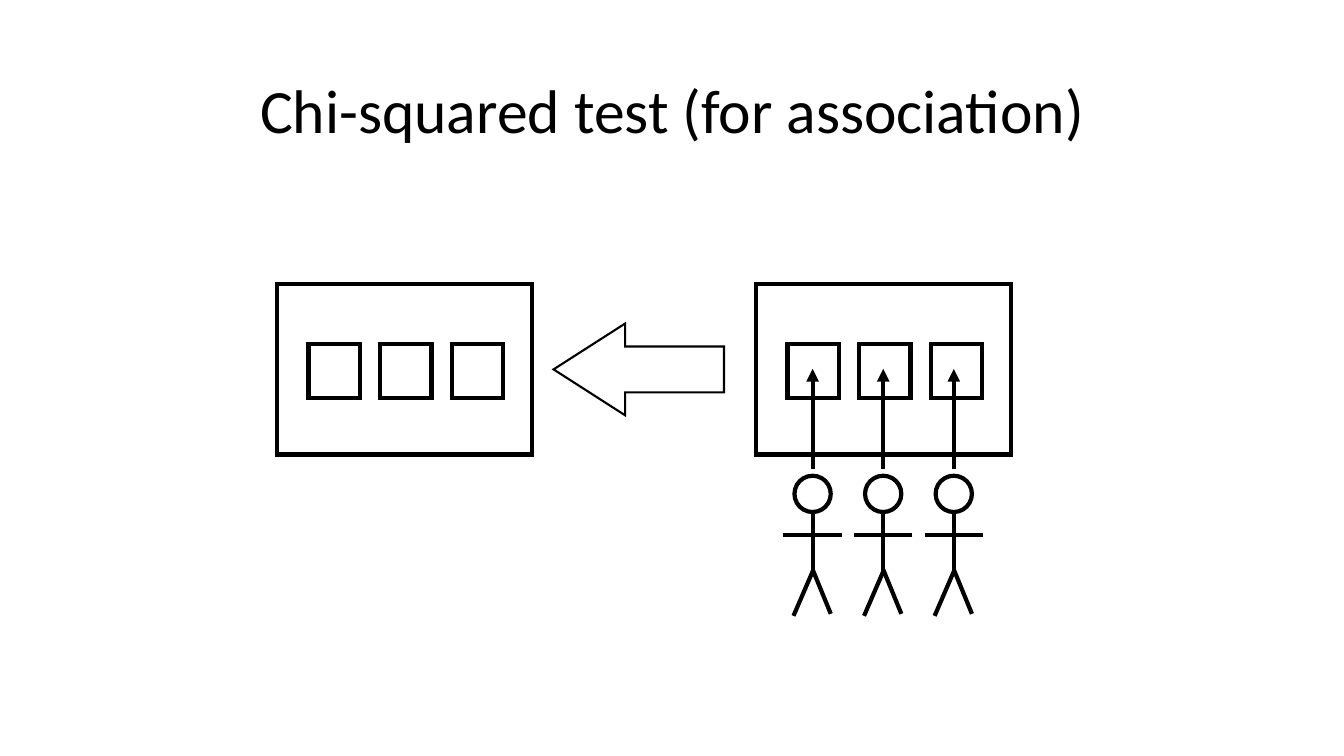
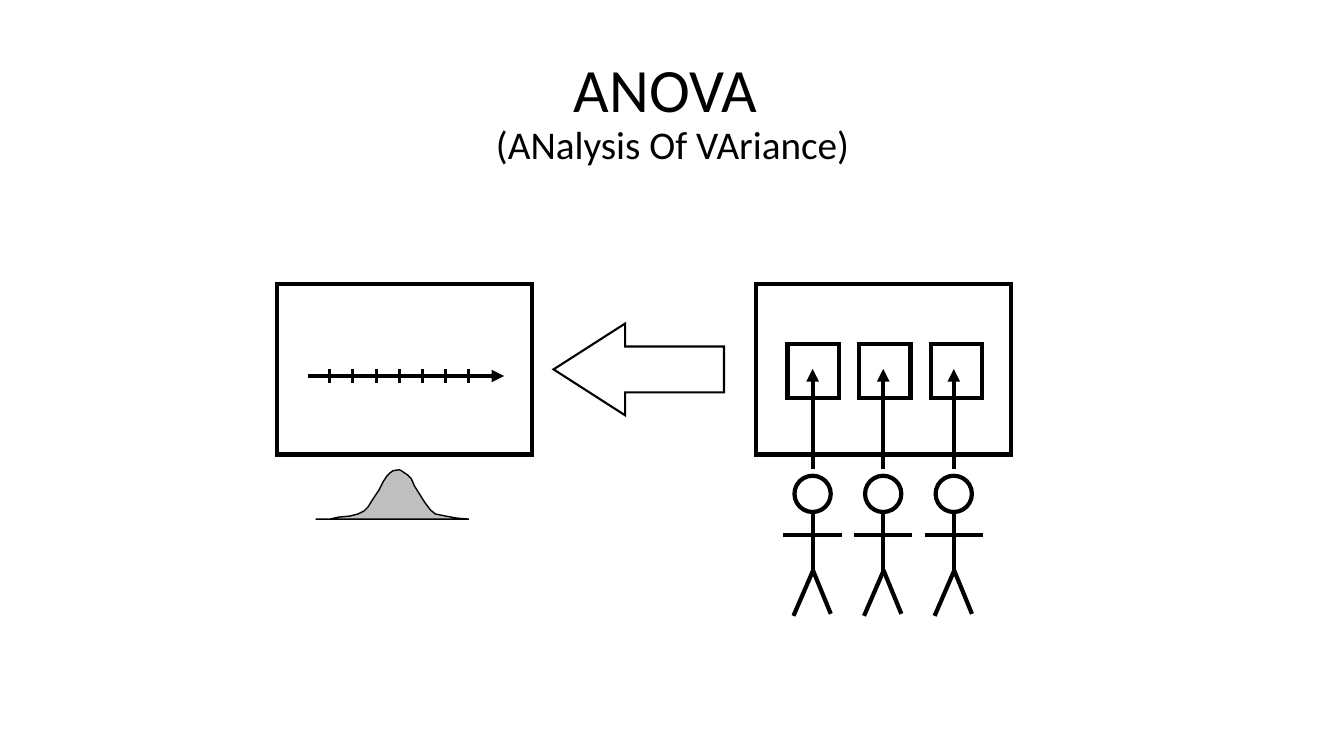
"""Build two slides that picture statistical tests as diagrams."""
from dataclasses import dataclass

import lxml.etree
import pptx
import pptx.dml.color
import pptx.enum.shapes
import pptx.enum.text
import pptx.oxml.ns
import pptx.shapes.autoshape
import pptx.shapes.connector
import pptx.shapes.shapetree
import pptx.slide
import pptx.util

Inches = pptx.util.Inches
Pt = pptx.util.Pt
RGBColor = pptx.dml.color.RGBColor
MSO_SHAPE = pptx.enum.shapes.MSO_SHAPE
qn = pptx.oxml.ns.qn
Shapes = pptx.shapes.shapetree.SlideShapes | pptx.shapes.shapetree.GroupShapes

BLACK = RGBColor(0x00, 0x00, 0x00)
WHITE = RGBColor(0xFF, 0xFF, 0xFF)
GRAY = RGBColor(0xBF, 0xBF, 0xBF)
FONT = "Calibri"
THICK = 3

LEFT_PANEL = 2.75
RIGHT_PANEL = 7.5
PANEL_TOP = 2.82
CATEGORIES = 3
CATEGORY_STEP = 0.71
FIRST_PERSON = 8.06
PERSON_STEP = 0.7
AXIS_Y = 3.73
TICKS = 7
TICK_STEP = 0.23

BELL = [
    (3.13, 5.15), (4.65, 5.15), (4.53, 5.14), (4.42, 5.12), (4.32, 5.1),
    (4.27, 5.06), (4.21, 4.98), (4.16, 4.9), (4.11, 4.82), (4.08, 4.75),
    (4.04, 4.71), (4.01, 4.69), (3.98, 4.67), (3.96, 4.66), (3.9, 4.67),
    (3.87, 4.69), (3.84, 4.72), (3.8, 4.78), (3.76, 4.86), (3.7, 4.95),
    (3.65, 5.03), (3.61, 5.07), (3.55, 5.1), (3.47, 5.12), (3.36, 5.13),
    (3.27, 5.15),
]


@dataclass(frozen=True)
class Stroke:
    """A straight line, with x measured from the figure's origin."""

    x1: float
    y1: float
    x2: float
    y2: float
    width: float = THICK
    arrow: bool = False


PERSON = [
    Stroke(0, 5.08, 0, 5.67),
    Stroke(0, 5.67, -0.19, 6.11),
    Stroke(0, 5.65, 0.18, 6.09),
    Stroke(0.29, 5.31, -0.29, 5.31),
    Stroke(0, 4.65, 0, 3.66, arrow=True),
]
AXIS = Stroke(3.05, AXIS_Y, 5, AXIS_Y, arrow=True)
TICK = Stroke(3.27, AXIS_Y - 0.07, 3.27, AXIS_Y + 0.07, width=2.25)


def paint(shape: pptx.shapes.autoshape.Shape, fill: RGBColor, width: float) -> None:
    """Give a shape a plain fill and a black, sharp-cornered outline."""
    shape.shadow.inherit = False
    shape.fill.solid()
    shape.fill.fore_color.rgb = fill
    shape.line.color.rgb = BLACK
    shape.line.width = Pt(width)
    ln = shape.element.spPr.find(qn("a:ln"))
    lxml.etree.SubElement(ln, qn("a:miter"), lim="800000")


def add_outline(shapes: Shapes, kind: MSO_SHAPE, left: float, top: float, width: float,
                height: float, line: float = THICK) -> pptx.shapes.autoshape.Shape:
    """Add a white preset shape with a black outline."""
    s = shapes.add_shape(kind, Inches(left), Inches(top), Inches(width), Inches(height))
    paint(s, WHITE, line)
    return s


def add_stroke(shapes: Shapes, stroke: Stroke, x: float = 0) -> None:
    """Add a black line, with an arrowhead where the stroke has one."""
    c: pptx.shapes.connector.Connector = shapes.add_connector(
        pptx.enum.shapes.MSO_CONNECTOR.STRAIGHT,
        Inches(x + stroke.x1), Inches(stroke.y1), Inches(x + stroke.x2), Inches(stroke.y2))
    c.line.color.rgb = BLACK
    c.line.width = Pt(stroke.width)
    sp_pr = c.element.spPr
    if stroke.arrow:
        lxml.etree.SubElement(sp_pr.find(qn("a:ln")), qn("a:tailEnd"), type="triangle")
    lxml.etree.SubElement(sp_pr, qn("a:effectLst"))


def add_panel(shapes: Shapes, left: float) -> None:
    """Add the frame of a variable."""
    add_outline(shapes, MSO_SHAPE.RECTANGLE, left, PANEL_TOP, 2.53, 1.69)


def add_categorical(slide: pptx.slide.Slide, left: float) -> None:
    """Add a panel that holds a row of category boxes."""
    shapes = slide.shapes.add_group_shape().shapes
    add_panel(shapes, left)
    for i in range(CATEGORIES):
        add_outline(shapes, MSO_SHAPE.RECTANGLE, left + 0.31 + i * CATEGORY_STEP, 3.41, 0.51, 0.54)


def add_person(slide: pptx.slide.Slide, x: float) -> None:
    """Add a stick figure with an arrow to its category."""
    shapes = slide.shapes.add_group_shape().shapes
    add_outline(shapes, MSO_SHAPE.OVAL, x - 0.18, 4.72, 0.36, 0.36)
    for stroke in PERSON:
        add_stroke(shapes, stroke, x)


def add_continuous(slide: pptx.slide.Slide) -> None:
    """Add a panel with a scale, and a bell curve below it."""
    shapes = slide.shapes.add_group_shape().shapes
    add_panel(shapes, LEFT_PANEL)
    add_stroke(shapes, AXIS)
    for i in range(TICKS):
        add_stroke(shapes, TICK, i * TICK_STEP)
    points = [(Inches(x), Inches(y)) for x, y in BELL]
    builder = shapes.build_freeform(*points[0])
    builder.add_line_segments(points[1:], close=True)
    paint(builder.convert_to_shape(), GRAY, 1)


def add_title(slide: pptx.slide.Slide, text: str, subtitle: str = "") -> None:
    """Fill the title, with an optional smaller second line."""
    title = slide.shapes.title
    title.left, title.top = Inches(0.92), Inches(0.4)
    title.width, title.height = Inches(11.5), Inches(1.45)
    tf = title.text_frame
    tf.auto_size = pptx.enum.text.MSO_AUTO_SIZE.NONE
    tf.vertical_anchor = pptx.enum.text.MSO_ANCHOR.MIDDLE
    p = tf.paragraphs[0]
    p.alignment = pptx.enum.text.PP_ALIGN.CENTER
    p.line_spacing = 0.9
    p.font.name = FONT
    p.font.size = Pt(44)
    p.font.color.rgb = BLACK
    p.add_run().text = text
    if subtitle:
        p.add_line_break()
        r = p.add_run()
        r.text = subtitle
        r.font.size = Pt(28)


def add_test_slide(prs: pptx.presentation.Presentation, title: str,
                   subtitle: str = "") -> pptx.slide.Slide:
    """Add a slide with a title, the grouped people and the arrow to the outcome."""
    slide = prs.slides.add_slide(prs.slide_layouts.get_by_name("Title Only"))
    add_title(slide, title, subtitle)
    add_categorical(slide, RIGHT_PANEL)
    for i in range(CATEGORIES):
        add_person(slide, FIRST_PERSON + i * PERSON_STEP)
    arrow = add_outline(slide.shapes, MSO_SHAPE.LEFT_ARROW, 5.49, 3.21, 1.69, 0.91, line=1.5)
    arrow.adjustments[1] = 0.78
    return slide


def main() -> None:
    """Build and save the presentation."""
    prs = pptx.Presentation()
    prs.slide_width, prs.slide_height = Inches(13.33), Inches(7.5)
    add_categorical(add_test_slide(prs, "Chi-squared test (for association)"), LEFT_PANEL)
    add_continuous(add_test_slide(prs, "ANOVA ", "(ANalysis Of VAriance)"))
    prs.save("out.pptx")


if __name__ == "__main__":
    main()
